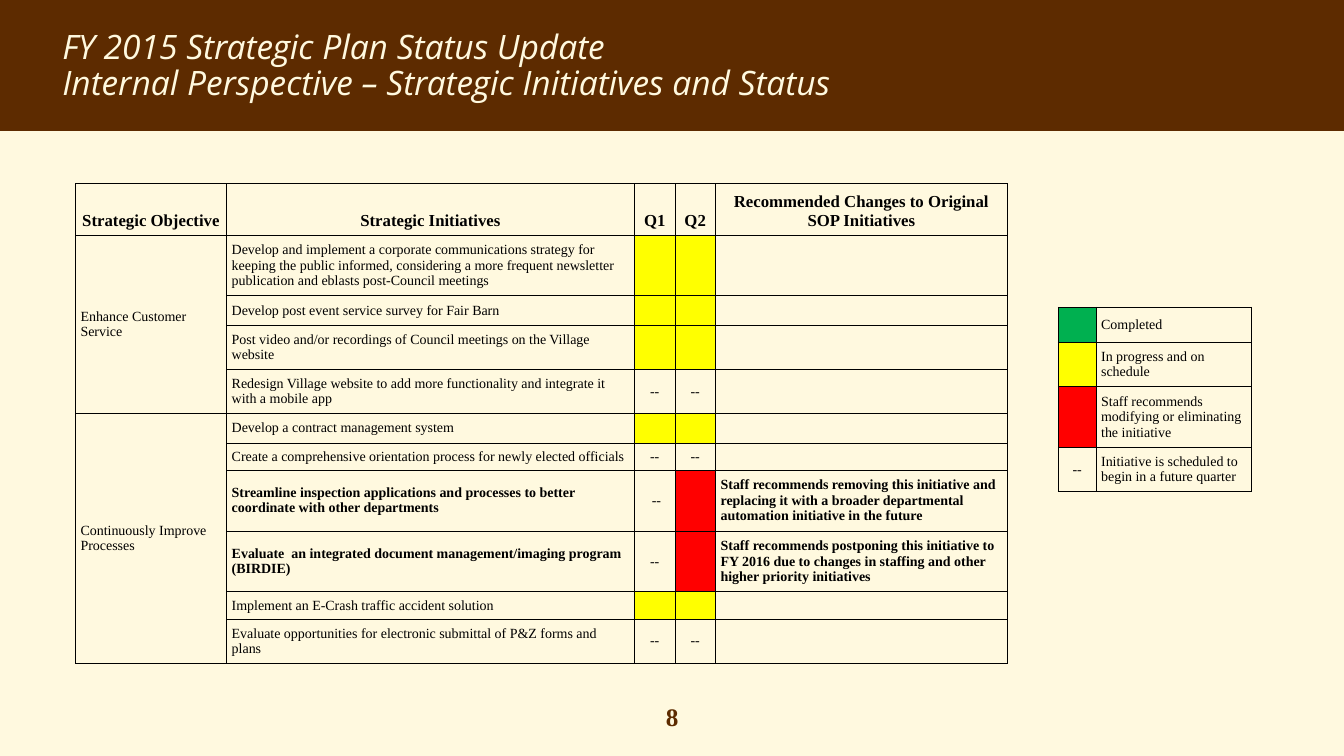
from pptx import Presentation
from pptx.dml.color import RGBColor
from pptx.enum.shapes import MSO_SHAPE as Shape
from pptx.enum.text import MSO_ANCHOR as Anchor, PP_ALIGN as Align
from pptx.oxml.xmlchemy import OxmlElement
from pptx.util import Cm, Pt

BROWN, CREAM, BLACK = "5D2B00", "FFF9DF", "000000"
GREEN, YELLOW, RED = "00B050", "FFFF00", "FF0000"
SERIF = "Times New Roman"
FUTURE = "--"

HEADINGS = ["Strategic Objective", "Strategic Initiatives", "Q1", "Q2",
            "Recommended Changes to Original SOP Initiatives"]
OBJECTIVES = [("Enhance Customer Service", 1, 4),
              ("Continuously Improve Processes", 5, 10)]
INITIATIVES = [
    ("Develop and implement a corporate communications strategy for keeping the public "
     "informed, considering a more frequent newsletter publication and eblasts "
     "post-Council meetings", YELLOW, YELLOW, ""),
    ("Develop post event service survey for Fair Barn", YELLOW, YELLOW, ""),
    ("Post video and/or recordings of Council meetings on the Village website",
     YELLOW, YELLOW, ""),
    ("Redesign Village website to add more functionality and integrate it with a mobile app",
     FUTURE, FUTURE, ""),
    ("Develop a contract management system", YELLOW, YELLOW, ""),
    ("Create a comprehensive orientation process for newly elected officials",
     FUTURE, FUTURE, ""),
    ("Streamline inspection applications and processes to better coordinate with "
     "other departments", " --", RED,
     "Staff recommends removing this initiative and replacing it with a broader "
     "departmental automation initiative in the future"),
    ("Evaluate  an integrated document management/imaging program (BIRDIE)", FUTURE, RED,
     "Staff recommends postponing this initiative to FY 2016 due to changes in staffing "
     "and other higher priority initiatives"),
    ("Implement an E-Crash traffic accident solution", YELLOW, YELLOW, ""),
    ("Evaluate opportunities for electronic submittal of P&Z forms and plans",
     FUTURE, FUTURE, ""),
]
LEGEND = [(GREEN, "Completed"),
          (YELLOW, "In progress and on schedule"),
          (RED, "Staff recommends modifying or eliminating the initiative"),
          (FUTURE, "Initiative is scheduled to begin in a future quarter")]


def color(value):
    return RGBColor.from_string(value)


def write(frame, text, size=10, font=SERIF, fill=BLACK, bold=False, italic=False,
          align=Align.LEFT, spacing=None):
    for index, line in enumerate(text.split("\n")):
        paragraph = frame.add_paragraph() if index else frame.paragraphs[0]
        paragraph.alignment = align
        if spacing:
            paragraph.line_spacing = spacing
        if line:
            run = paragraph.add_run()
            run.text = line
            run.font.size, run.font.name = Pt(size), font
            run.font.bold, run.font.italic = bold, italic
            run.font.color.rgb = color(fill)
        else:
            ending = OxmlElement("a:endParaRPr")
            ending.set("sz", str(size * 100))
            paragraph._p.append(ending)


def add_text(slide, left, top, width, height, text, **style):
    box = slide.shapes.add_textbox(Cm(left), Cm(top), Cm(width), Cm(height))
    box.text_frame.word_wrap = True
    write(box.text_frame, text, **style)


def add_band(slide, width, height):
    band = slide.shapes.add_shape(Shape.RECTANGLE, 0, 0, width, height)
    band.shadow.inherit = False
    band.fill.solid()
    band.fill.fore_color.rgb = color(BROWN)
    band.line.fill.background()


def add_borders(cell):
    properties = cell._tc.get_or_add_tcPr()
    for side in ("lnL", "lnR", "lnT", "lnB"):
        line = OxmlElement(f"a:{side}")
        line.set("w", str(Pt(0.5)))
        solid = OxmlElement("a:solidFill")
        tint = OxmlElement("a:srgbClr")
        tint.set("val", BLACK)
        solid.append(tint)
        line.append(solid)
        properties.append(line)


def add_grid(slide, left, top, widths, heights):
    frame = slide.shapes.add_table(len(heights), len(widths), Cm(left), Cm(top),
                                   Cm(sum(widths)), Cm(sum(heights)))
    table = frame.table
    table.first_row = table.horz_banding = False
    for column, width in zip(table.columns, widths):
        column.width = Cm(width)
    for row, height in zip(table.rows, heights):
        row.height = Cm(height)
    for cell in table.iter_cells():
        add_borders(cell)
        cell.fill.background()
        cell.margin_left = cell.margin_right = Cm(0.13)
        cell.margin_top = cell.margin_bottom = Cm(0.13)
        cell.vertical_anchor = Anchor.MIDDLE
    return table


def set_status(cell, status):
    if status in (GREEN, YELLOW, RED):
        cell.fill.solid()
        cell.fill.fore_color.rgb = color(status)
        status = ""
    write(cell.text_frame, status, align=Align.CENTER)


def add_initiatives(slide):
    table = add_grid(slide, 1.9, 4.62, [3.81, 10.28, 1.02, 1.02, 7.36],
                     [1.3, 1.51, 0.75, 1.1, 1.1, 0.74, 0.68, 1.52, 1.52, 0.69, 0.68])
    for column, heading in enumerate(HEADINGS):
        cell = table.cell(0, column)
        cell.vertical_anchor = Anchor.BOTTOM
        write(cell.text_frame, heading, size=12, bold=True, align=Align.CENTER)
    for objective, first, last in OBJECTIVES:
        table.cell(first, 0).merge(table.cell(last, 0))
        for row in range(first, last + 1):
            write(table.cell(row, 0).text_frame, objective if row == first else "")
    for row, (initiative, q1, q2, change) in enumerate(INITIATIVES, 1):
        write(table.cell(row, 1).text_frame, initiative, bold=bool(change))
        set_status(table.cell(row, 2), q1)
        set_status(table.cell(row, 3), q2)
        write(table.cell(row, 4).text_frame, change, bold=True)


def add_legend(slide):
    table = add_grid(slide, 26.67, 7.74, [0.95, 3.91], [0.89, 1.09, 1.53, 1.11])
    for row, (status, meaning) in enumerate(LEGEND):
        set_status(table.cell(row, 0), status)
        write(table.cell(row, 1).text_frame, meaning)


def main():
    presentation = Presentation()
    presentation.slide_width, presentation.slide_height = Cm(33.87), Cm(19.05)
    slide = presentation.slides.add_slide(presentation.slide_layouts[6])
    slide.background.fill.solid()
    slide.background.fill.fore_color.rgb = color(CREAM)
    add_band(slide, presentation.slide_width, Cm(3.3))
    add_text(slide, 15.67, 17.55, 2.54, 1.02, "8", size=18, fill=BROWN, bold=True,
             align=Align.CENTER)
    add_text(slide, 1.32, 0.64, 31.22, 2.31,
             "FY 2015 Strategic Plan Status Update\n"
             "Internal Perspective – Strategic Initiatives and Status",
             size=24, font="Open Sans", fill=CREAM, italic=True, spacing=0.9)
    add_initiatives(slide)
    add_legend(slide)
    presentation.save("out.pptx")


if __name__ == "__main__":
    main()
